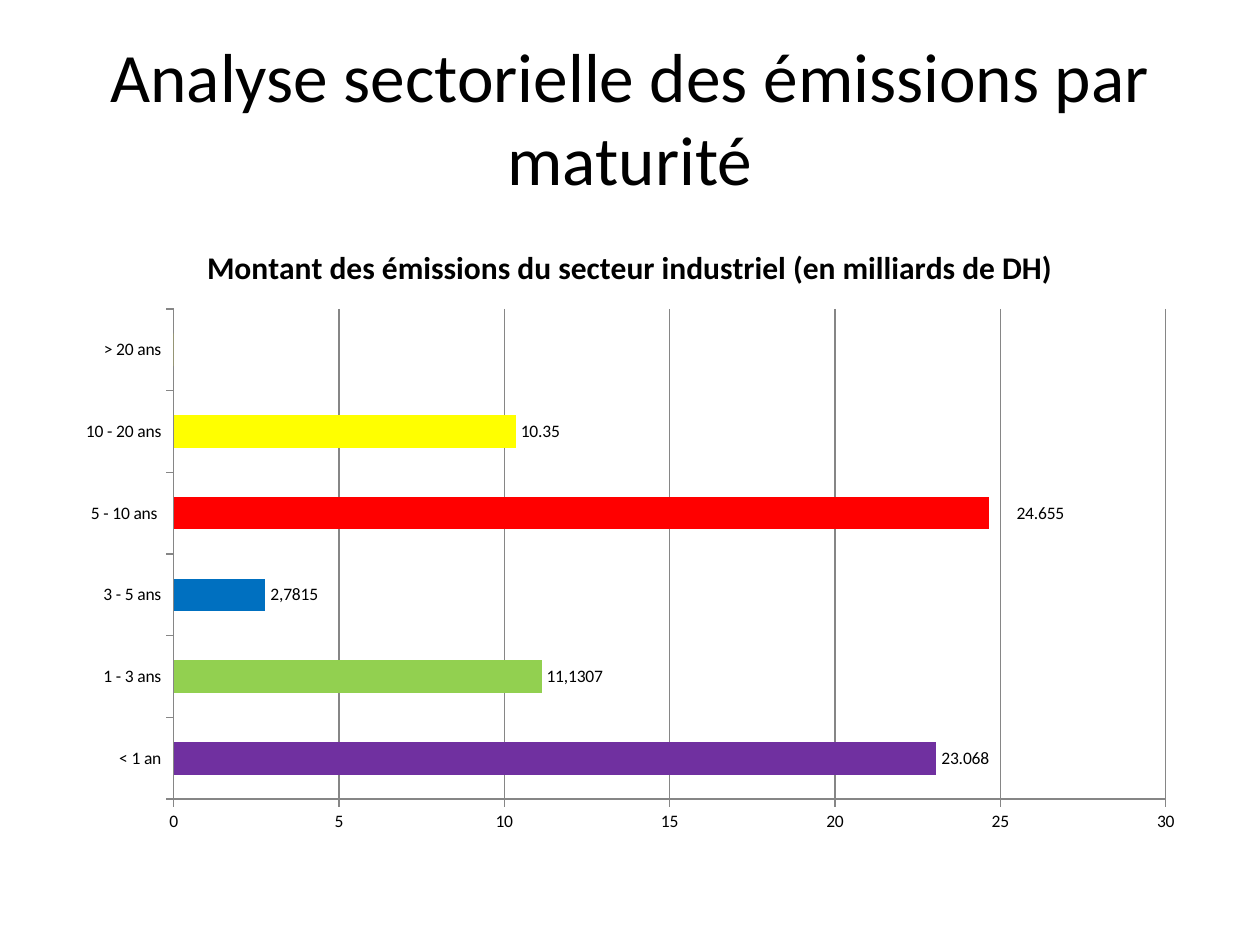
from dataclasses import dataclass

from lxml import etree
from pptx import Presentation
from pptx.chart.data import CategoryChartData
from pptx.dml.color import RGBColor
from pptx.enum.chart import XL_CHART_TYPE, XL_LABEL_POSITION, XL_TICK_MARK
from pptx.enum.text import MSO_ANCHOR, PP_ALIGN
from pptx.oxml.ns import qn
from pptx.util import Inches, Pt

BAR = XL_CHART_TYPE.BAR_CLUSTERED
END = XL_LABEL_POSITION.OUTSIDE_END
OUT = XL_TICK_MARK.OUTSIDE
MIDDLE = MSO_ANCHOR.MIDDLE
CENTER = PP_ALIGN.CENTER


@dataclass(frozen=True)
class Theme:
    """Colours and type sizes of the slide."""
    face: str = "Calibri"
    ink: str = "000000"
    rule: str = "868686"
    title: float = 39.6
    head: float = 18
    body: float = 10


THEME = Theme()
WIDE, HIGH = Inches(10), Inches(7.5)
TITLE = "Analyse sectorielle des émissions par maturité"
HEAD = "Montant des émissions du secteur industriel (en milliards de DH)"
ROWS = [
    ("< 1 an", 23.068, "7030A0"),
    ("1 - 3 ans", 11.13, "92D050"),
    ("3 - 5 ans", 2.78, "0070C0"),
    ("5 - 10 ans ", 24.655, "FF0000"),
    ("10 - 20 ans", 10.35, "FFFF00"),
    ("> 20 ans", 0, "FFFF00"),
]
NOTES = {1: "11,1307", 2: "2,7815"}
MOVED = 3


def area(left, top, width, height):
    """Turn shares of the slide into a box."""
    return (int(left * WIDE), int(top * HIGH),
            int(width * WIDE), int(height * HIGH))


def style(font, size, bold=False):
    """Set the face, size, weight and ink of a font."""
    font.name = THEME.face
    font.size = Pt(size)
    font.bold = bold
    font.color.rgb = RGBColor.from_string(THEME.ink)


def layout(parent, **parts):
    """Build a manual layout element under a chart part."""
    node = etree.SubElement(parent, qn("c:layout"))
    manual = etree.SubElement(node, qn("c:manualLayout"))
    for name, value in parts.items():
        etree.SubElement(manual, qn(f"c:{name}")).set("val", str(value))
    return node


def add_title(slide, box):
    """Place the centred slide title in its box."""
    frame = slide.shapes.add_textbox(*box).text_frame
    frame.word_wrap = True
    frame.vertical_anchor = MIDDLE
    frame.text = TITLE
    para = frame.paragraphs[0]
    para.alignment = CENTER
    style(para.runs[0].font, THEME.title)


def set_axis(axis, grid):
    """Draw one axis with outer ticks and thin rules."""
    axis.major_tick_mark = OUT
    axis.has_major_gridlines = grid
    lines = [axis.format.line]
    if grid:
        lines.append(axis.major_gridlines.format.line)
    for line in lines:
        line.color.rgb = RGBColor.from_string(THEME.rule)
    style(axis.tick_labels.font, THEME.body)


def set_labels(bars):
    """Write the values beside the bars."""
    labels = bars.data_labels
    labels.show_value = True
    labels.position = END
    labels.number_format = "0.0##;;"
    labels.number_format_is_linked = False
    style(labels.font, THEME.body)
    for spot, text in NOTES.items():
        label = bars.points[spot].data_label
        label.text_frame.text = text
        style(label.text_frame.paragraphs[0].runs[0].font, THEME.body)
        label.position = END
    label = bars.points[MOVED].data_label
    style(label.font, THEME.body)
    label.position = END
    group = bars._element.find(qn("c:dLbls"))
    node = group.xpath(f"c:dLbl[c:idx/@val='{MOVED}']")[0]
    node.insert(1, layout(node, x=0.02, y=0))
    for leader in group.findall(qn("c:showLeaderLines")):
        leader.set("val", "0")


def add_bars(slide, box):
    """Place the bar chart of issues by maturity in its box."""
    data = CategoryChartData()
    data.categories = [name for name, _, _ in ROWS]
    data.add_series("Series 1", [value for _, value, _ in ROWS])
    chart = slide.shapes.add_chart(BAR, *box, data).chart
    style(chart.font, THEME.body)
    chart.has_legend = False
    chart.has_title = True
    chart.chart_title.include_in_layout = False
    frame = chart.chart_title.text_frame
    frame.text = HEAD
    style(frame.paragraphs[0].runs[0].font, THEME.head, True)
    set_axis(chart.category_axis, False)
    set_axis(chart.value_axis, True)
    chart.value_axis.minimum_scale = 0
    chart.value_axis.maximum_scale = 30
    chart.value_axis.major_unit = 5
    plot = chart.plots[0]
    plot.gap_width = 150
    plot.vary_by_categories = False
    bars = plot.series[0]
    for spot, (_, _, tone) in enumerate(ROWS):
        fill = bars.points[spot].format.fill
        fill.solid()
        fill.fore_color.rgb = RGBColor.from_string(tone)
    bars.format.fill.solid()
    bars.format.fill.fore_color.rgb = RGBColor.from_string(ROWS[-1][2])
    set_labels(bars)
    region = chart._chartSpace.find(f".//{qn('c:plotArea')}")
    for old in region.findall(qn("c:layout")):
        region.remove(old)
    region.insert(0, layout(region, layoutTarget="inner", xMode="edge",
                            yMode="edge", x=0.0975, y=0.142,
                            w=0.875, h=0.786))


def main():
    """Build and save the slide."""
    deck = Presentation()
    deck.slide_width, deck.slide_height = WIDE, HIGH
    slide = deck.slides.add_slide(deck.slide_layouts[6])
    add_title(slide, area(0.05, 0.04, 0.9, 1 / 6))
    add_bars(slide, area(0.05, 7 / 30, 0.9, 0.66))
    deck.save("out.pptx")


if __name__ == "__main__":
    main()
